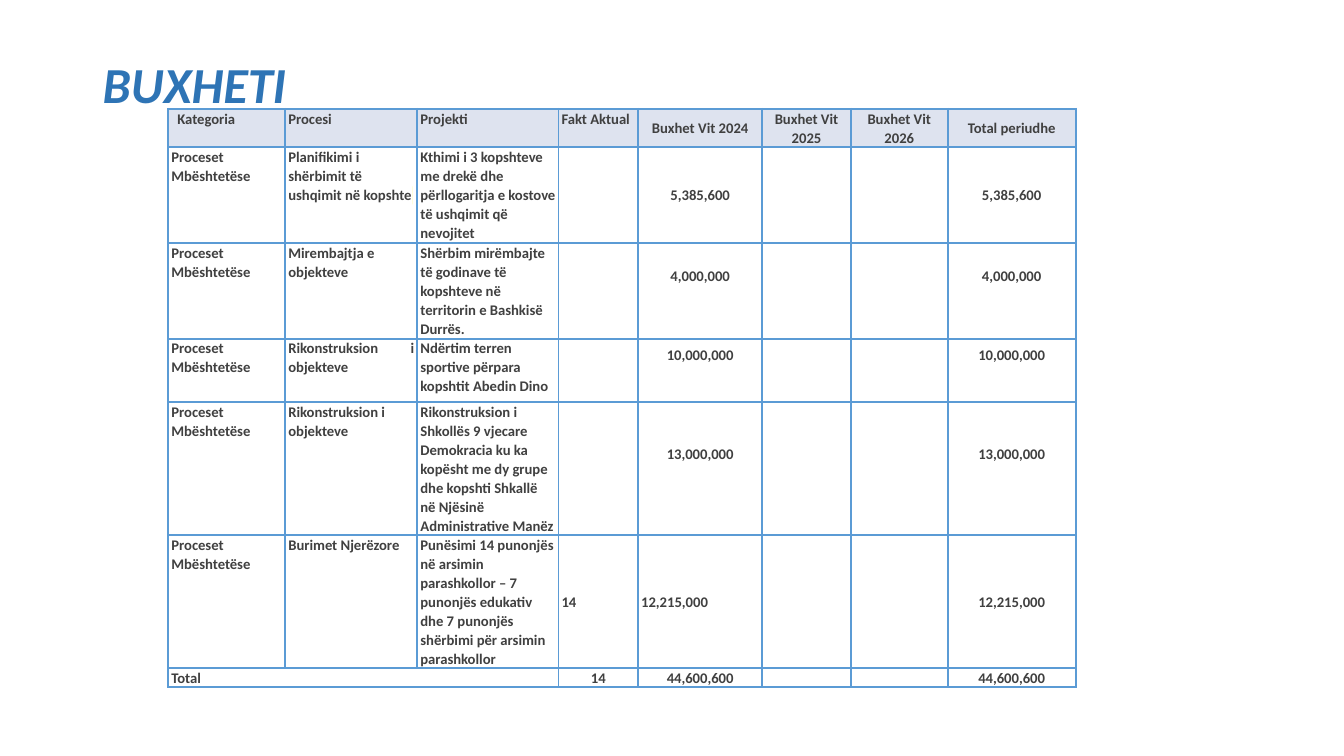
from dataclasses import dataclass

from lxml.etree import SubElement
from pptx import Presentation
from pptx.dml.color import RGBColor
from pptx.enum.text import MSO_ANCHOR as Anchor, PP_ALIGN as Align
from pptx.oxml.ns import qn
from pptx.util import Inches, Pt


@dataclass(frozen=True)
class Theme:
    """Colours, font and type sizes of the slide."""
    font: str = "Calibri"
    title: str = "2E74B5"
    text: str = "404040"
    header: str = "DEE3EF"
    border: str = "5B9BD5"
    highlight: str = "FFFF00"
    title_size: float = 36
    cell_size: float = 10.5
    border_width: float = 1.5


THEME = Theme()
ALIGNMENTS = {"l": Align.LEFT, "c": Align.CENTER, "j": Align.JUSTIFY}
COLUMN_WIDTHS = [1.16, 1.31, 1.4, 0.79, 1.23, 0.88, 0.96, 1.27]
ROW_HEIGHTS = [0.38, 0.95, 0.95, 0.63, 1.32, 1.32, 0.19]
HEADERS = ["Kategoria", "Procesi", "Projekti", "Fakt Aktual", "Buxhet Vit 2024",
           "Buxhet Vit 2025", "Buxhet Vit 2026", "Total periudhe"]
SUPPORT = "Proceset Mbështetëse"
PROJECTS = [
    ("Planifikimi i shërbimit të ushqimit në kopshte",
     "Kthimi i 3 kopshteve me drekë dhe përllogaritja e kostove të ushqimit që nevojitet",
     "", "5,385,600"),
    ("Mirembajtja e objekteve",
     "Shërbim mirëmbajte të godinave të kopshteve në territorin e Bashkisë Durrës.",
     "", "4,000,000"),
    ("Rikonstruksion i objekteve",
     "Ndërtim terren sportive përpara kopshtit Abedin Dino",
     "", "10,000,000"),
    ("Rikonstruksion i objekteve",
     "Rikonstruksion i Shkollës 9 vjecare Demokracia ku ka kopësht me dy grupe "
     "dhe kopshti Shkallë në Njësinë Administrative Manëz",
     "", "13,000,000"),
    ("Burimet Njerëzore",
     "Punësimi 14 punonjës në arsimin parashkollor – 7 punonjës edukativ "
     "dhe 7 punonjës shërbimi për arsimin parashkollor",
     "14", "12,215,000"),
]
ROWS = [
    HEADERS,
    *([SUPPORT, process, project, actual, budget, "", "", budget]
      for process, project, actual, budget in PROJECTS),
    ["Total", "", "", "14", "44,600,600", "", "", "44,600,600"],
]
ROW_ALIGNMENTS = ["jjjjcccc", "lllccccc", "lllccccc", "jjlccccc",
                  "lllccccc", "lllljccc", "lllccccc"]
RAISED_ROWS = (2, 3, 4)


def apply(target, values):
    """Set each attribute in a dict of format values."""
    for name, value in values.items():
        setattr(target, name, value)


def add_run(paragraph, text, size, color, italic=False):
    """Add a bold run in the theme font."""
    run = paragraph.add_run()
    run.text = text
    apply(run.font, {"name": THEME.font, "size": Pt(size), "bold": True, "italic": italic})
    run.font.color.rgb = RGBColor.from_string(color)
    return run


def add_title(slide, text):
    """Add the slide heading, resting on the bottom of its box."""
    box = slide.shapes.add_textbox(Inches(0.92), Inches(0), Inches(10.75), Inches(1.18))
    apply(box.text_frame, {"word_wrap": True, "vertical_anchor": Anchor.BOTTOM})
    paragraph = box.text_frame.paragraphs[0]
    apply(paragraph, {"alignment": Align.JUSTIFY, "line_spacing": 1.07})
    add_run(paragraph, text, THEME.title_size, THEME.title, italic=True)


def add_borders(cell):
    """Draw a line on all four sides of a cell."""
    properties = cell._tc.get_or_add_tcPr()
    for side in ("a:lnL", "a:lnR", "a:lnT", "a:lnB"):
        line = SubElement(properties, qn(side), w=str(Pt(THEME.border_width)))
        fill = SubElement(line, qn("a:solidFill"))
        SubElement(fill, qn("a:srgbClr"), val=THEME.border)


def highlight_run(run):
    """Put the highlight colour behind a run."""
    properties = run.font._element
    highlight = SubElement(properties, qn("a:highlight"))
    SubElement(highlight, qn("a:srgbClr"), val=THEME.highlight)
    properties.find(qn("a:solidFill")).addnext(highlight)


def format_cell(cell, text, alignment, is_header, is_middle):
    """Fill in one table cell and return its paragraph."""
    add_borders(cell)
    apply(cell, {
        "margin_left": Inches(0.03), "margin_right": Inches(0.03),
        "margin_top": 0, "margin_bottom": 0,
        "vertical_anchor": Anchor.MIDDLE if is_middle else Anchor.TOP,
    })
    if is_header:
        cell.fill.solid()
        cell.fill.fore_color.rgb = RGBColor.from_string(THEME.header)
    else:
        cell.fill.background()
    paragraph = cell.text_frame.paragraphs[0]
    apply(paragraph, {"alignment": ALIGNMENTS[alignment], "line_spacing": 1.07,
                      "space_after": Pt(8)})
    if text:
        add_run(paragraph, text, THEME.cell_size, THEME.text)
    else:
        SubElement(paragraph._p, qn("a:endParaRPr"), sz=str(int(THEME.cell_size * 100)))
    return paragraph


def add_budget_table(slide):
    """Add the budget table with its header and total rows."""
    frame = slide.shapes.add_table(
        len(ROWS), len(HEADERS), Inches(1.67), Inches(1.08),
        Inches(sum(COLUMN_WIDTHS)), Inches(sum(ROW_HEIGHTS)))
    table = frame.table
    apply(table, {"first_row": False, "horz_banding": False})
    for column, width in zip(table.columns, COLUMN_WIDTHS):
        column.width = Inches(width)
    for row, height in zip(table.rows, ROW_HEIGHTS):
        row.height = Inches(height)
    for r, (texts, alignments) in enumerate(zip(ROWS, ROW_ALIGNMENTS)):
        for c, (text, alignment) in enumerate(zip(texts, alignments)):
            cell = table.cell(r, c)
            is_middle = c > 3 or (c == 3 and r > 0)
            paragraph = format_cell(cell, text, alignment, r == 0, is_middle)
            if r in RAISED_ROWS and is_middle and text:
                cell.margin_bottom = Inches(0.3)
            if (r, c) == (1, 1):
                highlight_run(add_run(paragraph, " ", THEME.cell_size, THEME.text))
    table.cell(0, 0).margin_left = Inches(0.09)
    table.cell(len(ROWS) - 1, 0).merge(table.cell(len(ROWS) - 1, 2))


def main():
    """Build the budget slide and save it."""
    presentation = Presentation()
    apply(presentation, {"slide_width": Inches(13.33), "slide_height": Inches(7.5)})
    slide = presentation.slides.add_slide(presentation.slide_layouts[6])
    add_title(slide, "BUXHETI")
    add_budget_table(slide)
    presentation.save("out.pptx")


if __name__ == "__main__":
    main()
